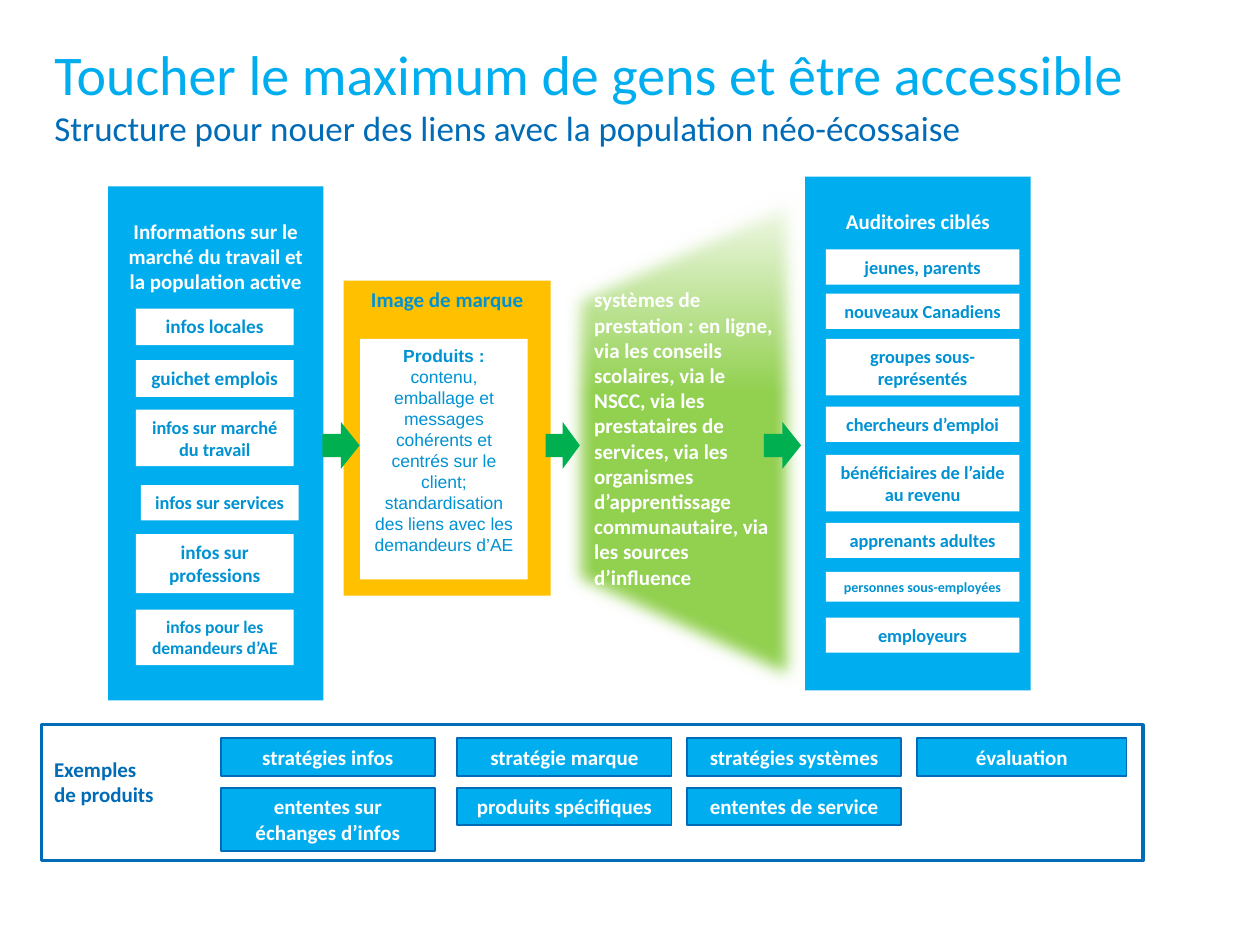
from lxml import etree
from pptx import Presentation
from pptx.dml.color import RGBColor as RGB
from pptx.enum.shapes import MSO_SHAPE as Kind
from pptx.enum.text import MSO_ANCHOR as Anchor, MSO_AUTO_SIZE as Auto, PP_ALIGN as Align
from pptx.oxml.ns import qn
from pptx.util import Cm, Pt

HUE = {
    "sky": "00AEEF", "navy": "006BB6", "blue": "0092D2", "white": "FFFFFF",
    "gold": "FFC000", "lime": "92D050", "green": "00B050",
}


def write(frame, lines, size, hue, bold=True, align=Align.CENTER, face="Calibri"):
    """Fill a text frame with one paragraph for each line."""
    frame.word_wrap = True
    frame.auto_size = Auto.NONE
    frame.vertical_anchor = Anchor.TOP
    for i, line in enumerate(lines):
        para = frame.paragraphs[0] if i == 0 else frame.add_paragraph()
        para.alignment = align
        run = para.add_run()
        run.text = line
        run.font.size = Pt(size)
        run.font.bold = bold
        run.font.name = face
        run.font.color.rgb = RGB.from_string(HUE[hue])


def block(x, y, w, h, fill=None, line=None, width=1, kind=Kind.RECTANGLE):
    """Add a flat shape, measured in centimetres."""
    shape = slide.shapes.add_shape(kind, Cm(x), Cm(y), Cm(w), Cm(h))
    shape.shadow.inherit = False
    if fill:
        shape.fill.solid()
        shape.fill.fore_color.rgb = RGB.from_string(HUE[fill])
    else:
        shape.fill.background()
    if line:
        shape.line.color.rgb = RGB.from_string(HUE[line])
        shape.line.width = Pt(width)
    else:
        shape.line.fill.background()
    return shape


deck = Presentation()
deck.slide_width, deck.slide_height = Cm(25.4), Cm(19.05)
slide = deck.slides.add_slide(deck.slide_layouts[5])

# Title
title = slide.shapes.title
title.left, title.top, title.width, title.height = Cm(0.84), Cm(0.56), Cm(23.34), Cm(2.67)
write(title.text_frame, ["Toucher le maximum de gens et être accessible",
                         "Structure pour nouer des liens avec la population néo-écossaise"],
      32, "sky", False, Align.LEFT)
title.text_frame.vertical_anchor = Anchor.MIDDLE
sub = title.text_frame.paragraphs[1].runs[0].font
sub.size = Pt(20)
sub.color.rgb = RGB.from_string(HUE["navy"])

# Brand and products
brand = block(6.93, 5.66, 4.17, 6.35, "gold")
write(brand.text_frame, ["Image de marque"], 12, "blue")
goods = block(7.26, 6.83, 3.38, 4.85, "white")
write(goods.text_frame, [
    "Produits :",
    "contenu, emballage et messages cohérents et centrés sur le client; "
    "standardisation des liens avec les demandeurs d’AE",
], 10, "blue", False, face="Arial")
goods.text_frame.paragraphs[0].runs[0].font.bold = True

# Delivery systems: a soft-edged funnel turned on its side
funnel = block(8.48, 6.48, 10.59, 4.75, "lime", kind=Kind.TRAPEZOID)
funnel.rotation = 270
funnel.adjustments[0] = 0.464
funnel.fill.gradient()
funnel.fill.gradient_angle = 0
for stop, (spot, hue) in zip(funnel.fill.gradient_stops, [(0.59, "lime"), (1, "white")]):
    stop.position = spot
    stop.color.rgb = RGB.from_string(HUE[hue])
effects = funnel._element.spPr.find(qn("a:effectLst"))
etree.SubElement(effects, qn("a:softEdge"), rad=str(Cm(0.32)))

system = slide.shapes.add_textbox(Cm(11.73), Cm(5.66), Cm(4.24), Cm(6.4))
write(system.text_frame, [
    "systèmes de prestation : en ligne, via les conseils scolaires, via le NSCC, "
    "via les prestataires de services, via les organismes d’apprentissage "
    "communautaire, via les sources d’influence",
], 12, "white", align=Align.LEFT)

# Side panels: heading, frame, left and width of the labels, then
# (text, top, height, size) for each label
panels = [
    ("Informations sur le marché du travail et la population active",
     (2.18, 3.76, 4.34, 10.36), 2.74, 3.18, [
         ("infos locales", 6.22, 0.74, 11),
         ("guichet emplois", 7.26, 0.74, 11),
         ("infos sur marché du travail", 8.26, 1.14, 10.5),
         ("infos sur services", 9.78, 0.71, 10.5),
         ("infos sur professions", 10.77, 1.19, 11),
         ("infos pour les demandeurs d’AE", 12.29, 1.12, 10),
     ]),
    ("Auditoires ciblés",
     (16.23, 3.56, 4.55, 10.36), 16.65, 3.9, [
         ("jeunes, parents", 5.03, 0.71, 10.5),
         ("nouveaux Canadiens", 5.92, 0.71, 10.5),
         ("groupes sous-représentés", 6.83, 1.14, 10.5),
         ("chercheurs d’emploi", 8.2, 0.71, 10.5),
         ("bénéficiaires de l’aide au revenu", 9.17, 1.14, 10.5),
         ("apprenants adultes", 10.54, 0.71, 10.5),
         ("personnes sous-employées", 11.53, 0.6, 8),
         ("employeurs", 12.45, 0.71, 10.5),
     ]),
]
for head, area, left, wide, labels in panels:
    panel = block(*area, "sky")
    panel.text_frame.margin_top = Cm(0.64)
    write(panel.text_frame, [head], 12, "white")
    for text, top, high, size in labels:
        shift = 0.1 if text == "infos sur services" else 0
        label = block(left + shift, top, wide, high, "white")
        write(label.text_frame, [text], size, "blue")

# Flow arrows
for x, w in [(6.5, 0.75), (11, 0.69), (15.4, 0.75)]:
    block(x, 8.51, w, 0.94, "green", kind=Kind.RIGHT_ARROW)

# Product examples
frame = block(0.84, 14.61, 22.2, 2.74, line="navy", width=2)
frame.text_frame.margin_top = Cm(0.64)
write(frame.text_frame, ["Exemples", "de produits"], 12, "navy", align=Align.LEFT)

samples = [
    (4.45, 4.32, ["stratégies infos", "ententes sur échanges d’infos"]),
    (9.22, 4.32, ["stratégie marque", "produits spécifiques"]),
    (13.85, 4.32, ["stratégies systèmes", "ententes de service"]),
    (18.49, 4.22, ["évaluation"]),
]
for x, w, texts in samples:
    for row, text in enumerate(texts):
        high = 1.27 if len(text) > 25 else 0.76
        box = block(x, 14.88 + row, w, high, "sky", "navy")
        write(box.text_frame, [text], 12, "white")

deck.save("out.pptx")
